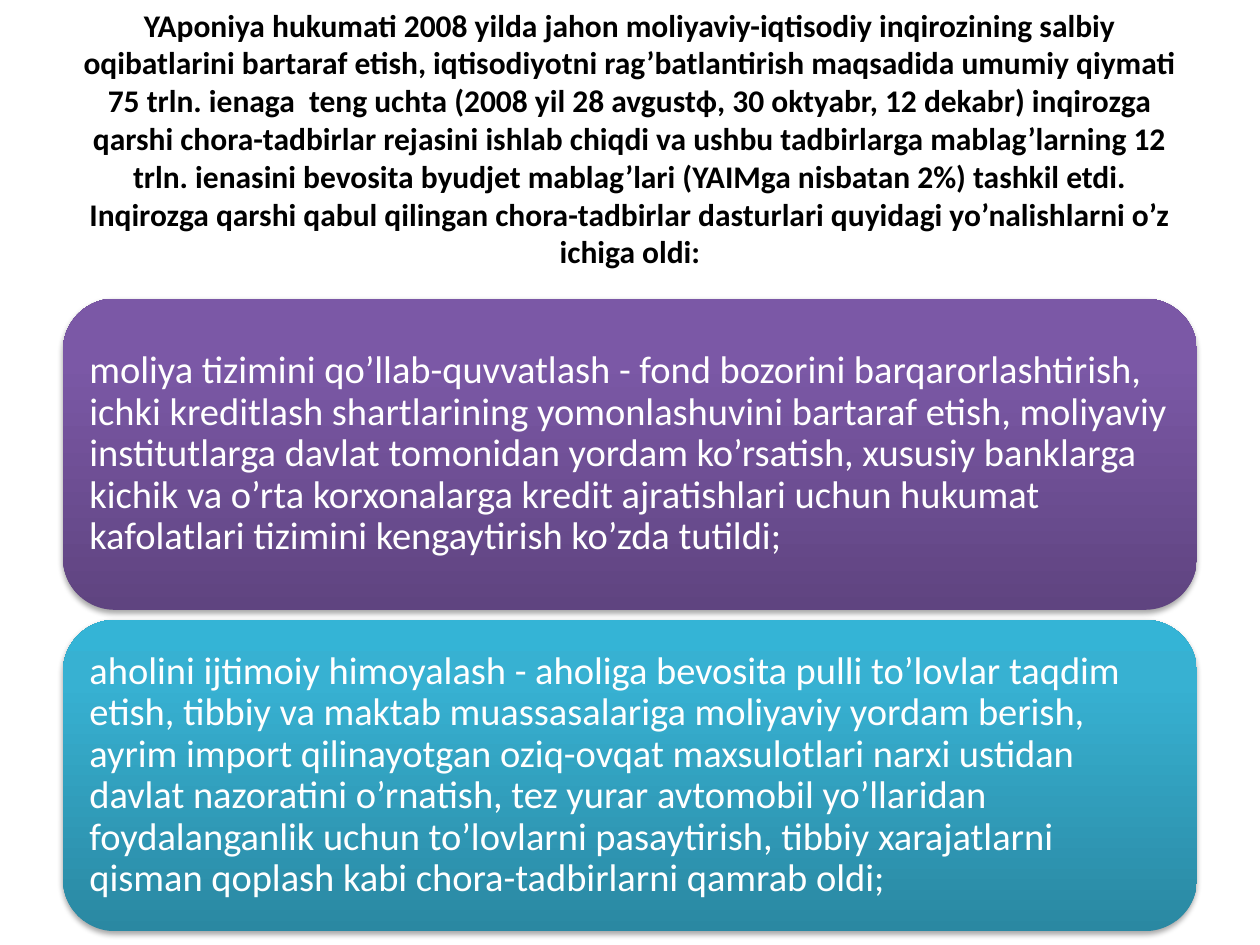
from lxml.etree import SubElement
from pptx import Presentation
from pptx.dml.color import RGBColor
from pptx.enum.shapes import MSO_SHAPE
from pptx.enum.text import MSO_ANCHOR, MSO_AUTO_SIZE, PP_ALIGN
from pptx.oxml.ns import qn
from pptx.util import Inches, Pt

TITLE = (
    "YAponiya hukumati 2008 yilda jahon moliyaviy-iqtisodiy inqirozining salbiy "
    "oqibatlarini bartaraf etish, iqtisodiyotni rag’batlantirish maqsadida umumiy qiymati "
    "75 trln. ienaga  teng uchta (2008 yil 28 avgustф, 30 oktyabr, 12 dekabr) inqirozga "
    "qarshi chora-tadbirlar rejasini ishlab chiqdi va ushbu tadbirlarga mablag’larning 12 "
    "trln. ienasini bevosita byudjet mablag’lari (YAIMga nisbatan 2%) tashkil etdi. "
    "Inqirozga qarshi qabul qilingan chora-tadbirlar dasturlari quyidagi yo’nalishlarni o’z "
    "ichiga oldi:"
)
MEASURES = [
    (
        "moliya tizimini qo’llab-quvvatlash - fond bozorini barqarorlashtirish, "
        "ichki kreditlash shartlarining yomonlashuvini bartaraf etish, moliyaviy "
        "institutlarga davlat tomonidan yordam ko’rsatish, xususiy banklarga "
        "kichik va o’rta korxonalarga kredit ajratishlari uchun hukumat "
        "kafolatlari tizimini kengaytirish ko’zda tutildi;",
        ["5F4480", "7B58A6", "7C57A8"],
    ),
    (
        "aholini ijtimoiy himoyalash - aholiga bevosita pulli to’lovlar taqdim "
        "etish, tibbiy va maktab muassasalariga moliyaviy yordam berish, "
        "ayrim import qilinayotgan oziq-ovqat maxsulotlari narxi ustidan "
        "davlat nazoratini o’rnatish, tez yurar avtomobil yo’llaridan "
        "foydalanganlik uchun to’lovlarni pasaytirish, tibbiy xarajatlarni "
        "qisman qoplash kabi chora-tadbirlarni qamrab oldi;",
        ["2A88A2", "37B1D2", "34B4D6"],
    ),
]
STOPS = [0, 80, 100]
LEFT, WIDTH = 0.5, 9
PANEL_TOP, PANEL_HEIGHT, PANEL_STEP = 2.37, 2.47, 2.55
TEXT_INSET = 0.12


def color(value):
    return RGBColor.from_string(value)


class SlideBuilder:
    font_name = "Calibri"

    def __init__(self, page):
        self.page = page

    def style(self, para, size, value, bold=False):
        para.font.name = self.font_name
        para.font.size = Pt(size)
        para.font.bold = bold
        para.font.color.rgb = color(value)

    def title(self, text, left, top, width, height):
        box = self.page.shapes.title
        box.left, box.top = Inches(left), Inches(top)
        box.width, box.height = Inches(width), Inches(height)
        frame = box.text_frame
        frame.text = text
        frame.word_wrap = True
        frame.auto_size = MSO_AUTO_SIZE.NONE
        frame.vertical_anchor = MSO_ANCHOR.MIDDLE
        frame.margin_bottom = Inches(0.35)
        para = frame.paragraphs[0]
        para.alignment = PP_ALIGN.CENTER
        self.style(para, 18, "000000", bold=True)

    def panel(self, colors, left, top, width, height):
        shape = self.page.shapes.add_shape(
            MSO_SHAPE.ROUNDED_RECTANGLE,
            Inches(left), Inches(top), Inches(width), Inches(height),
        )
        shape.line.fill.background()
        self.gradient(shape, colors)
        self.shadow(shape)

    def gradient(self, shape, colors):
        shape.fill.gradient()
        shape.fill.gradient_angle = 90
        stops = shape.element.spPr.find(".//" + qn("a:gsLst"))
        for stop in list(stops):
            stops.remove(stop)
        for position, value in zip(STOPS, colors):
            stop = SubElement(stops, qn("a:gs"), pos=str(position * 1000))
            SubElement(stop, qn("a:srgbClr"), val=value)

    def shadow(self, shape):
        shape.shadow.inherit = False
        effects = shape.element.spPr.find(qn("a:effectLst"))
        outer = SubElement(
            effects, qn("a:outerShdw"),
            blurRad=str(Pt(3.1)), dist=str(Pt(1.8)), dir="5400000", rotWithShape="0",
        )
        shade = SubElement(outer, qn("a:srgbClr"), val="000000")
        SubElement(shade, qn("a:alpha"), val="35000")

    def text(self, text, left, top, width, height):
        box = self.page.shapes.add_textbox(
            Inches(left), Inches(top), Inches(width), Inches(height)
        )
        frame = box.text_frame
        frame.text = text
        frame.word_wrap = True
        frame.vertical_anchor = MSO_ANCHOR.MIDDLE
        frame.margin_left = frame.margin_right = Inches(0.09)
        frame.margin_top = frame.margin_bottom = Inches(0.09)
        para = frame.paragraphs[0]
        para.line_spacing = 0.9
        self.style(para, 22, "FFFFFF")


def main():
    deck = Presentation()
    deck.slide_width, deck.slide_height = Inches(10), Inches(7.5)
    builder = SlideBuilder(deck.slides.add_slide(deck.slide_layouts[5]))
    builder.title(TITLE, LEFT, 0.94, WIDTH, 0.61)
    for index, (text, colors) in enumerate(MEASURES):
        top = PANEL_TOP + index * PANEL_STEP
        builder.panel(colors, LEFT, top, WIDTH, PANEL_HEIGHT)
        builder.text(
            text, LEFT + TEXT_INSET, top + TEXT_INSET,
            WIDTH - 2 * TEXT_INSET, PANEL_HEIGHT - 2 * TEXT_INSET,
        )
    deck.save("out.pptx")


if __name__ == "__main__":
    main()
